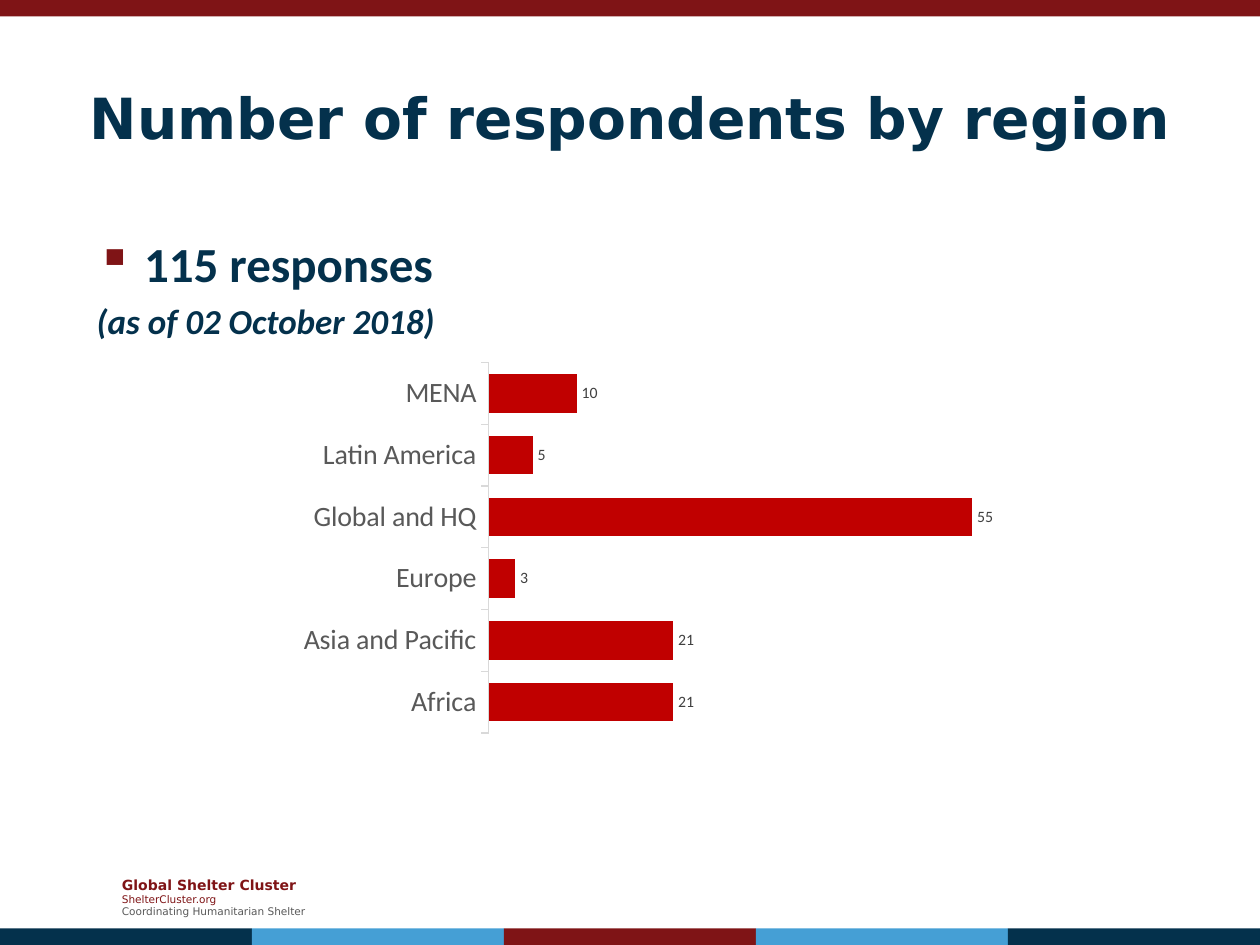
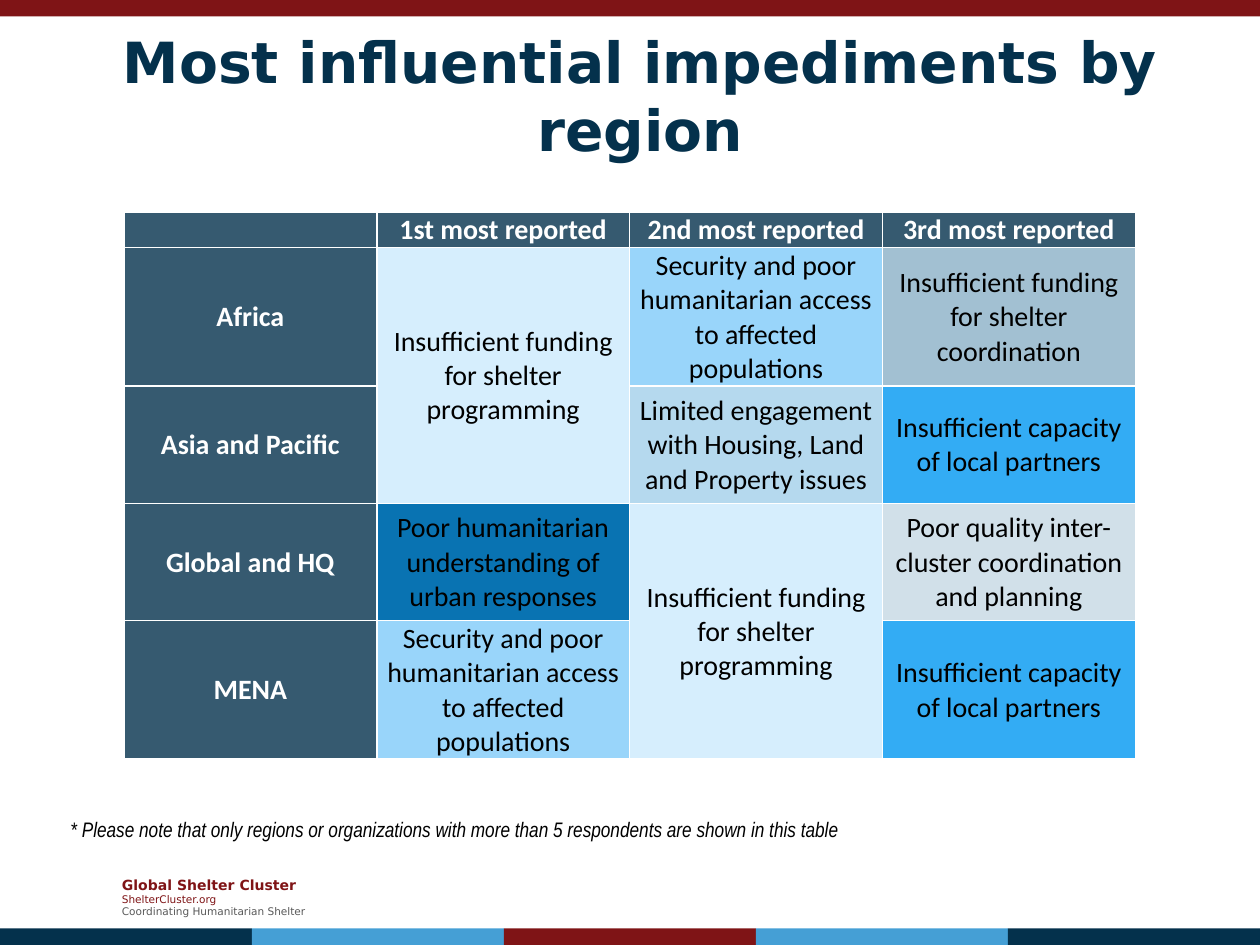
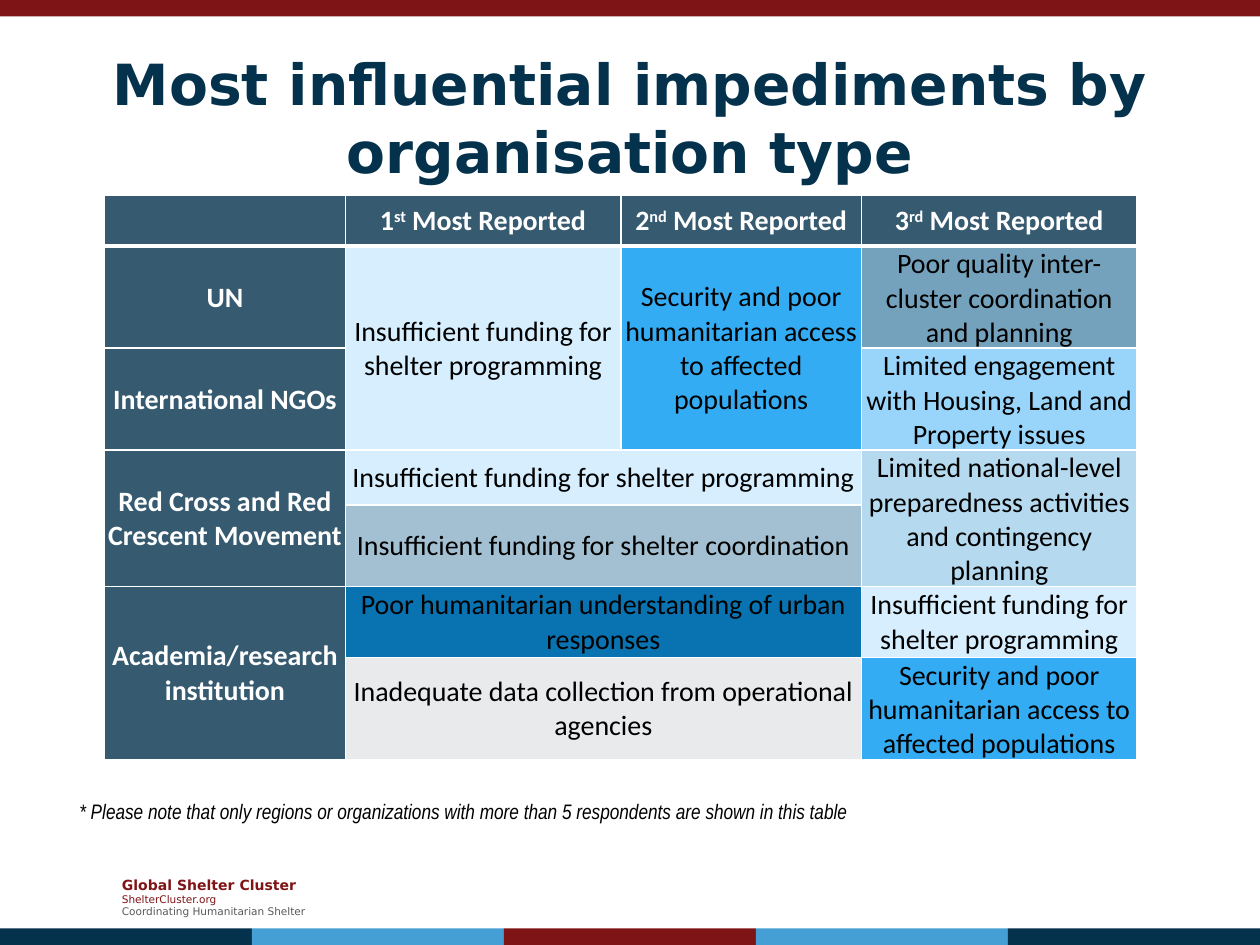
"""Build three slides of survey results: respondents and main impediments."""
from dataclasses import dataclass

from lxml import etree
from pptx import Presentation
from pptx.chart.data import CategoryChartData
from pptx.dml.color import RGBColor
from pptx.enum.chart import XL_CHART_TYPE, XL_LABEL_POSITION, XL_TICK_MARK
from pptx.enum.shapes import MSO_SHAPE
from pptx.enum.text import MSO_ANCHOR, PP_ALIGN
from pptx.oxml.ns import qn
from pptx.util import Pt

RECT = MSO_SHAPE.RECTANGLE
TOP, MIDDLE = MSO_ANCHOR.TOP, MSO_ANCHOR.MIDDLE
CENTER, JUSTIFY = PP_ALIGN.CENTER, PP_ALIGN.JUSTIFY
BAR = XL_CHART_TYPE.BAR_CLUSTERED
OUTSIDE_END = XL_LABEL_POSITION.OUTSIDE_END
TICK_OUT = XL_TICK_MARK.OUTSIDE


@dataclass(frozen=True)
class Theme:
    navy: str = "04314C"
    sky: str = "459FD5"
    maroon: str = "7F1416"
    grey: str = "595959"
    black: str = "000000"
    white: str = "FFFFFF"
    bar: str = "C00000"
    bar_label: str = "404040"
    axis: str = "D9D9D9"
    header: str = "365A70"
    ice: str = "D6EEFD"
    light: str = "99D5FA"
    pale: str = "B5D9EE"
    bright: str = "33ACF4"
    strong: str = "0973B2"
    steel: str = "A2C0D2"
    slate: str = "74A1BC"
    mist: str = "D1E0E9"
    silver: str = "E8EAEB"
    head_font: str = "DejaVu Sans"
    body_font: str = "Calibri"
    note_font: str = "Arial Narrow"
    title_size: float = 32.4
    count_size: int = 28
    date_size: int = 20
    table_size: int = 16
    note_size: int = 12
    chart_size: int = 10
    label_size: int = 9
    brand_size: int = 8
    tagline_size: int = 6


T = Theme()
WIDTH, HEIGHT, BAND = 720, 540, 9.4
BANDS = [T.navy, T.sky, T.maroon, T.sky, T.navy]
FOOTER = [
    ("Global Shelter Cluster", T.brand_size, T.maroon, True),
    ("ShelterCluster.org", T.tagline_size, T.maroon, False),
    ("Coordinating Humanitarian Shelter", T.tagline_size, T.grey, False),
]
TITLES = [
    ("Number of respondents by region", 36, 21.6),
    ("Most influential impediments by region", 41.8, 9.4),
    ("Most influential impediments by organisation type", 36, 21.6),
]
NOTE = ("* Please note that only regions or organizations with more than "
        "5 respondents are shown in this table")

PROGRAMMING = "Insufficient funding for shelter programming"
COORDINATION = "Insufficient funding for shelter coordination"
SECURITY = "Security and poor humanitarian access to affected populations"
PROPERTY = "Limited engagement with Housing, Land and Property issues"
PARTNERS = "Insufficient capacity of local partners"
URBAN = "Poor humanitarian understanding of urban responses"
QUALITY = "Poor quality inter-cluster coordination and planning"
PREPAREDNESS = ("Limited national-level preparedness activities and "
                "contingency planning")
DATA = "Inadequate data collection from operational agencies"

REGION_ROWS = [
    ["", "1st most reported", "2nd most reported", "3rd most reported"],
    ["Africa", (PROGRAMMING, T.ice), (SECURITY, T.light),
     (COORDINATION, T.steel)],
    ["Asia and Pacific", None, (PROPERTY, T.pale), (PARTNERS, T.bright)],
    ["Global and HQ", (URBAN, T.strong), (PROGRAMMING, T.ice),
     (QUALITY, T.mist)],
    ["MENA", (SECURITY, T.light), None, (PARTNERS, T.bright)],
]
ORGANISATION_ROWS = [
    ["", "1^st^ Most Reported", "2^nd^ Most Reported",
     "3^rd^ Most Reported"],
    ["UN", (PROGRAMMING, T.ice), (SECURITY, T.bright), (QUALITY, T.slate)],
    ["International NGOs", None, None, (PROPERTY, T.light)],
    ["Red Cross and Red Crescent Movement", (PROGRAMMING, T.ice), None,
     (PREPAREDNESS, T.pale)],
    [None, (COORDINATION, T.steel), None, None],
    ["Academia/research institution", (URBAN, T.strong), None,
     (PROGRAMMING, T.ice)],
    [None, (DATA, T.silver), None, (SECURITY, T.bright)],
]
TABLES = [
    dict(slide=1, left=70.8, top=121, columns=[144.5] * 4,
         heights=[20.4, 79.2, 67, 67, 79.2], rows=REGION_ROWS,
         merges=[(1, 1, 2, 1), (3, 2, 4, 2)], header_line=1,
         note=(33.1, 460.8)),
    dict(slide=2, left=59.8, top=111.6, columns=[137.5, 157.5] * 2,
         heights=[29, 58, 58, 31.5, 46.5, 40.5, 58], rows=ORGANISATION_ROWS,
         merges=[(1, 1, 2, 1), (1, 2, 2, 2), (3, 0, 4, 0), (3, 1, 3, 2),
                 (3, 3, 4, 3), (4, 1, 4, 2), (5, 0, 6, 0), (5, 1, 5, 2),
                 (6, 1, 6, 2)], header_line=3, note=(38.2, 450.7)),
]


def add_run(p, text, font, size, color, bold=False, italic=False):
    r = p.add_run()
    r.text = text
    r.font.name, r.font.size = font, Pt(size)
    r.font.bold, r.font.italic = bold, italic
    r.font.color.rgb = RGBColor.from_string(color)
    return r


def add_box(s, left, top, width, height, anchor=TOP):
    tf = s.shapes.add_textbox(Pt(left), Pt(top), Pt(width), Pt(height)).text_frame
    tf.word_wrap = True
    tf.vertical_anchor = anchor
    return tf


prs = Presentation()
prs.slide_width, prs.slide_height = Pt(WIDTH), Pt(HEIGHT)

for title, left, top in TITLES:
    s = prs.slides.add_slide(prs.slide_layouts[6])
    tf = add_box(s, 62.6, 496.8, 124.6, 31.7, MIDDLE)
    for i, (text, size, color, bold) in enumerate(FOOTER):
        p = tf.add_paragraph() if i else tf.paragraphs[0]
        add_run(p, text, T.head_font, size, color, bold)
    step = WIDTH / len(BANDS)
    bars = [(0, 0, WIDTH, T.maroon)]
    bars += [(i * step, HEIGHT - BAND, step, c) for i, c in enumerate(BANDS)]
    for x, y, width, color in bars:
        sp = s.shapes.add_shape(RECT, Pt(x), Pt(y), Pt(width), Pt(BAND))
        sp.shadow.inherit = False
        sp.fill.solid()
        sp.fill.fore_color.rgb = RGBColor.from_string(color)
        sp.line.fill.background()
    p = add_box(s, left, top, 648, 90, MIDDLE).paragraphs[0]
    p.alignment = CENTER
    add_run(p, title, T.head_font, T.title_size, T.navy, True)

s = prs.slides[0]
tf = add_box(s, 48.2, 130, 215.3, 356.4)
p = tf.paragraphs[0]
pPr = p._p.get_or_add_pPr()
pPr.set("marL", str(Pt(27)))
pPr.set("indent", str(Pt(-27)))
color = etree.SubElement(pPr, qn("a:buClr"))
etree.SubElement(color, qn("a:srgbClr"), val=T.maroon)
etree.SubElement(pPr, qn("a:buChar"), char="▪")
add_run(p, "115 responses", T.body_font, T.count_size, T.navy, True)
p = tf.add_paragraph()
p.space_before = Pt(4)
add_run(p, "(as of 02 October 2018)", T.body_font, T.date_size, T.navy, True, True)

data = CategoryChartData()
data.categories = ["Africa", "Asia and Pacific", "Europe", "Global and HQ",
                   "Latin America", "MENA"]
data.add_series("Series 1", [21, 21, 3, 55, 5, 10])
chart = s.shapes.add_chart(BAR, Pt(113.8), Pt(202.3), Pt(492.5), Pt(221.8),
                           data).chart
chart.has_title = chart.has_legend = False
chart.font.name, chart.font.size = T.body_font, Pt(T.chart_size)
chart.font.color.rgb = RGBColor.from_string(T.black)
axis = chart.value_axis
axis.visible = axis.has_major_gridlines = False
axis.minimum_scale, axis.maximum_scale = 0, 60
axis = chart.category_axis
axis.major_tick_mark = TICK_OUT
axis.format.line.width = Pt(0.75)
axis.format.line.color.rgb = RGBColor.from_string(T.axis)
font = axis.tick_labels.font
font.name, font.size = T.body_font, Pt(16)
font.color.rgb = RGBColor.from_string(T.grey)
plot = chart.plots[0]
plot.gap_width = 61
plot.vary_by_categories = False
fill = plot.series[0].format.fill
fill.solid()
fill.fore_color.rgb = RGBColor.from_string(T.bar)
labels = plot.series[0].data_labels
labels.show_value = True
labels.position = OUTSIDE_END
labels.font.name, labels.font.size = T.body_font, Pt(T.label_size)
labels.font.color.rgb = RGBColor.from_string(T.bar_label)
area = chart._chartSpace.find(".//" + qn("c:plotArea"))
layout = area.find(qn("c:layout"))
if layout is None:
    layout = etree.Element(qn("c:layout"))
    area.insert(0, layout)
manual = etree.SubElement(layout, qn("c:manualLayout"))
for tag, value in [("layoutTarget", "inner"), ("xMode", "edge"),
                   ("yMode", "edge"), ("x", "0.336"), ("y", "0.022"),
                   ("w", "0.612"), ("h", "0.955")]:
    etree.SubElement(manual, qn("c:" + tag), val=value)

for spec in TABLES:
    s = prs.slides[spec["slide"]]
    columns, heights = spec["columns"], spec["heights"]
    table = s.shapes.add_table(
        len(heights), len(columns), Pt(spec["left"]), Pt(spec["top"]),
        Pt(sum(columns)), Pt(sum(heights))).table
    for column, width in zip(table.columns, columns):
        column.width = Pt(width)
    for row, height in zip(table.rows, heights):
        row.height = Pt(height)
    for r1, c1, r2, c2 in spec["merges"]:
        table.cell(r1, c1).merge(table.cell(r2, c2))
    for i, row in enumerate(spec["rows"]):
        for j, content in enumerate(row):
            cell = table.cell(i, j)
            heading = isinstance(content, str)
            text, fill = (content, T.header) if heading else content or ("", T.ice)
            cell.margin_left = cell.margin_right = cell.margin_top = Pt(0.7)
            cell.margin_bottom = 0
            cell.vertical_anchor = MIDDLE
            tcPr = cell._tc.get_or_add_tcPr()
            for side in "LRTB":
                width = spec["header_line"] if i == 0 and side == "B" else 1
                ln = etree.SubElement(tcPr, qn("a:ln" + side), w=str(Pt(width)))
                solid = etree.SubElement(ln, qn("a:solidFill"))
                etree.SubElement(solid, qn("a:srgbClr"), val=T.white)
            cell.fill.solid()
            cell.fill.fore_color.rgb = RGBColor.from_string(fill)
            p = cell.text_frame.paragraphs[0]
            p.alignment = CENTER
            if not text:
                etree.SubElement(p._p, qn("a:endParaRPr"),
                                 sz=str(T.table_size * 100))
                continue
            for k, part in enumerate(text.split("^")):
                r = add_run(p, part, T.body_font, T.table_size,
                            T.white if heading else T.black, heading)
                if k % 2:
                    r._r.get_or_add_rPr().set("baseline", "30000")
    p = add_box(s, *spec["note"], 649, 23.8).paragraphs[0]
    p.alignment = JUSTIFY
    p.line_spacing = 1.15
    p.space_after = Pt(10)
    add_run(p, NOTE, T.note_font, T.note_size, T.black, italic=True)

prs.save("out.pptx")
